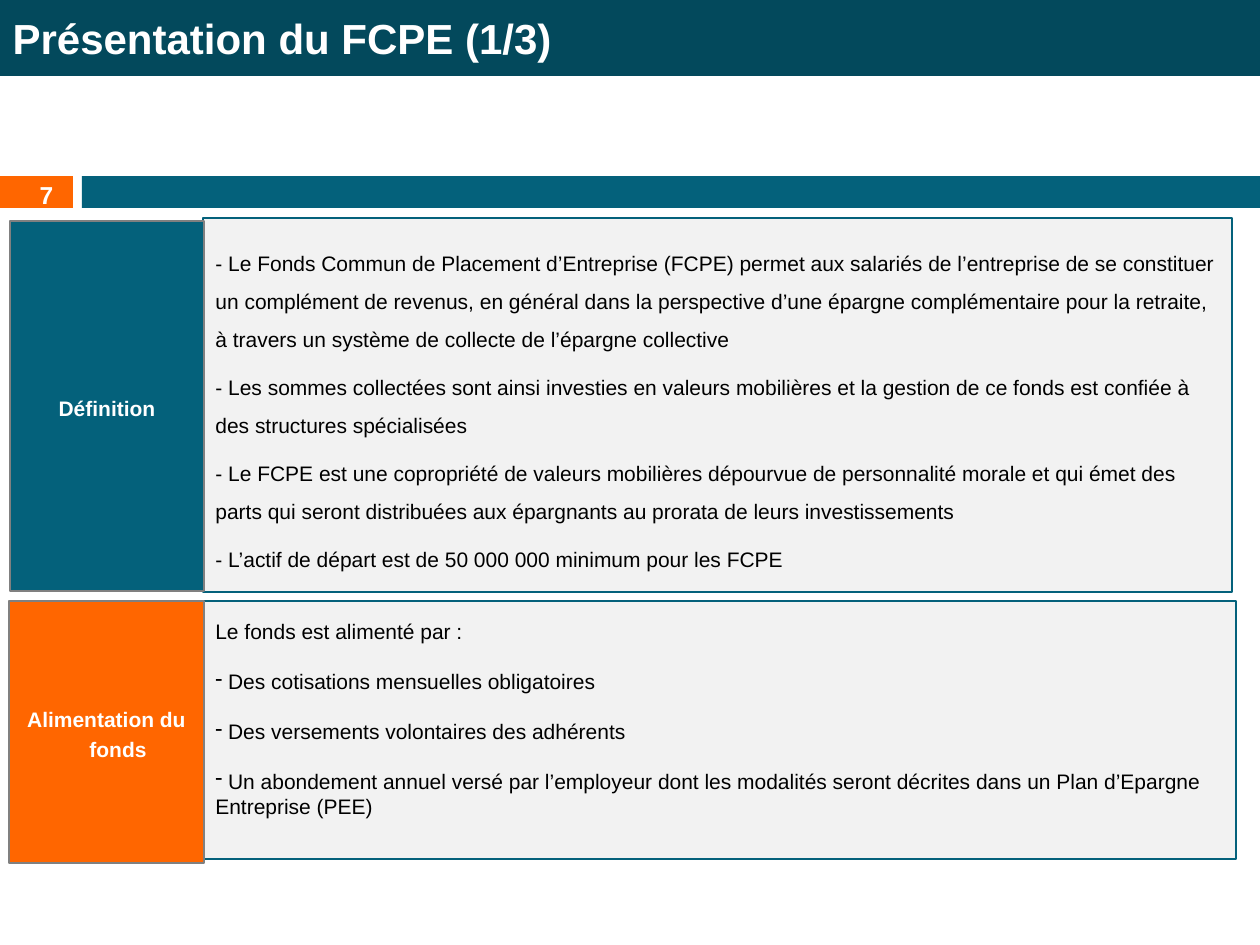
import pptx
import pptx.util
import pptx.dml.color
import pptx.enum.shapes
import pptx.enum.text
from lxml import etree
from pptx.oxml.ns import qn

EMU_PER_PX = 914400 / 126
RGB = pptx.dml.color.RGBColor
NAVY = RGB(0x03, 0x49, 0x5C)
TEAL = RGB(0x04, 0x61, 0x7B)
ORANGE = RGB(0xFF, 0x66, 0x00)
PALE = RGB(0xF2, 0xF2, 0xF2)
GREY = RGB(0x80, 0x80, 0x80)
WHITE = RGB(0xFF, 0xFF, 0xFF)
BLACK = RGB(0, 0, 0)

ALIGN = pptx.enum.text.PP_ALIGN
ANCHOR = pptx.enum.text.MSO_ANCHOR
SPACING = {"space_before": pptx.util.Pt(3), "space_after": pptx.util.Pt(3)}
LEFT = {"alignment": ALIGN.LEFT}
DEFINITION_FORMAT = {**LEFT, **SPACING, "line_spacing": 1.5}
FUNDING_FORMAT = {**LEFT, "space_after": pptx.util.Pt(14)}
LABEL_FORMAT = {"alignment": ALIGN.CENTER, **SPACING, "line_spacing": 1.2}
BODY_FONT = {"size": pptx.util.Pt(12), "bold": False}
LABEL_FONT = {"size": pptx.util.Pt(12), "bold": True}

DEFINITION = [
    "- Le Fonds Commun de Placement d’Entreprise (FCPE) permet aux salariés de l’entreprise "
    "de se constituer un complément de revenus, en général dans la perspective d’une épargne "
    "complémentaire pour la retraite, à travers un système de collecte de l’épargne collective",
    "- Les sommes collectées sont ainsi investies en valeurs mobilières et la gestion de ce "
    "fonds est confiée à des structures spécialisées",
    "- Le FCPE est une copropriété de valeurs mobilières dépourvue de personnalité morale et "
    "qui émet des parts qui seront distribuées aux épargnants au prorata de leurs investissements",
    "- L’actif de départ est de 50 000 000 minimum pour les FCPE",
]
FUNDING = [
    "Le fonds est alimenté par :",
    " Des cotisations mensuelles obligatoires",
    " Des versements volontaires des adhérents",
    " Un abondement annuel versé par l’employeur dont les modalités seront décrites dans un "
    "Plan d’Epargne Entreprise (PEE)",
]


def px(length):
    return pptx.util.Emu(round(length * EMU_PER_PX))


def apply(target, values):
    for name, value in values.items():
        setattr(target, name, value)


def write(shape, lines, paragraph_format, font, color, anchor=ANCHOR.MIDDLE):
    """Fill the shape with one paragraph per line."""
    frame = shape.text_frame
    apply(frame, {"word_wrap": True, "vertical_anchor": anchor,
                  "auto_size": pptx.enum.text.MSO_AUTO_SIZE.NONE})
    frame.text = "\n".join(lines)
    for paragraph in frame.paragraphs:
        apply(paragraph, paragraph_format)
        run = paragraph.runs[0]
        apply(run.font, {"name": "Arial", **font})
        run.font.color.rgb = color


def add_box(slide, box, fill, line=None, width=0.75):
    shape = slide.shapes.add_shape(
        pptx.enum.shapes.MSO_SHAPE.RECTANGLE, *map(px, box))
    shape.shadow.inherit = False
    shape.fill.solid()
    shape.fill.fore_color.rgb = fill
    if line is None:
        shape.line.fill.background()
    else:
        shape.line.color.rgb = line
        shape.line.width = pptx.util.Pt(width)
    return shape


def add_label(slide, box, fill, text):
    """Add a row heading with a hanging indent."""
    shape = add_box(slide, box, fill, GREY, 1.5)
    write(shape, [text], LABEL_FORMAT, LABEL_FONT, WHITE)
    properties = shape.text_frame.paragraphs[0]._p.get_or_add_pPr()
    properties.set("marL", str(px(23)))
    properties.set("indent", str(-px(23)))


def add_panel(slide, box, lines, paragraph_format, anchor=ANCHOR.MIDDLE):
    shape = add_box(slide, box, PALE, TEAL)
    write(shape, lines, paragraph_format, BODY_FONT, BLACK, anchor)
    return shape


def add_dash(paragraph):
    bullet = etree.SubElement(paragraph._p.get_or_add_pPr(), qn("a:buChar"))
    bullet.set("char", "-")


def set_title(slide, text):
    title = slide.shapes.title
    apply(title, dict(zip(("left", "top", "width", "height"),
                          map(px, (0, 0, 1260, 76)))))
    title.fill.solid()
    title.fill.fore_color.rgb = NAVY
    write(title, [text], LEFT, {"size": pptx.util.Pt(24), "bold": True}, WHITE)


def add_number_band(slide, number):
    add_box(slide, (0, 176, 73, 32), ORANGE)
    add_box(slide, (82, 176, 1178, 32), TEAL)
    text_box = slide.shapes.add_textbox(*map(px, (10, 178, 73, 34)))
    write(text_box, [number], {"alignment": ALIGN.CENTER},
          {"size": pptx.util.Pt(14), "bold": True}, WHITE)


def main():
    presentation = pptx.Presentation()
    presentation.slide_width = px(1260)
    presentation.slide_height = px(945)
    slide = presentation.slides.add_slide(presentation.slide_layouts[5])

    set_title(slide, "Présentation du FCPE (1/3)")
    add_number_band(slide, "7")

    add_panel(slide, (203, 218, 1029, 374), DEFINITION, DEFINITION_FORMAT)
    add_label(slide, (10, 221, 194, 370), TEAL, "Définition")

    funding = add_panel(slide, (203, 601, 1033, 258), FUNDING, FUNDING_FORMAT, ANCHOR.TOP)
    funding.text_frame.margin_top = px(18)
    for paragraph in funding.text_frame.paragraphs[1:]:
        add_dash(paragraph)
    add_label(slide, (9, 601, 195, 262), ORANGE, "Alimentation du fonds")

    presentation.save("out.pptx")


if __name__ == "__main__":
    main()
